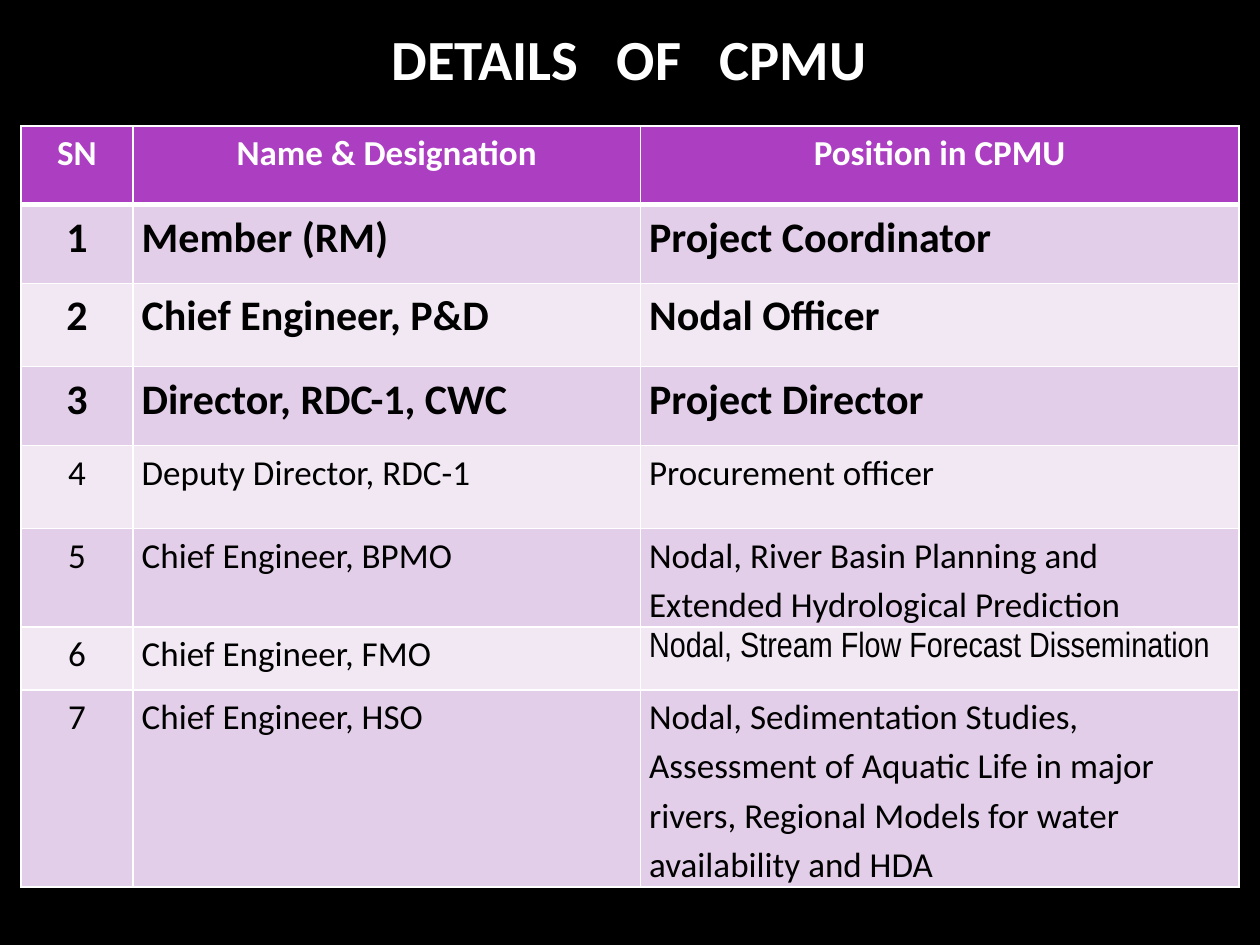
from lxml.etree import SubElement
from pptx import Presentation
from pptx.dml.color import RGBColor
from pptx.enum.text import MSO_ANCHOR, PP_ALIGN
from pptx.oxml.ns import qn
from pptx.util import Pt

COLORS = {
    "background": "000000",
    "title": "FFFFFF",
    "header_fill": "AC3EC1",
    "header_text": "FFFFFF",
    "odd_fill": "E3CEE9",
    "even_fill": "F1E8F4",
    "body_text": "000000",
    "border": "FFFFFF",
}

COLUMN_WIDTHS = [64, 290, 342]
ROW_HEIGHTS = [45, 45, 47.5, 45, 47.5, 47.5, 36, 47.5]
HEADINGS = ["SN", "Name & Designation", "Position in CPMU"]
MEMBERS = [
    ("Member (RM)", "Project Coordinator"),
    ("Chief Engineer, P&D", "Nodal Officer"),
    ("Director, RDC-1, CWC", "Project Director"),
    ("Deputy Director, RDC-1", "Procurement officer"),
    ("Chief Engineer, BPMO",
     "Nodal, River Basin Planning and Extended Hydrological Prediction"),
    ("Chief Engineer, FMO", "Nodal, Stream Flow Forecast Dissemination"),
    ("Chief Engineer, HSO",
     "Nodal, Sedimentation Studies, Assessment of Aquatic Life in major "
     "rivers, Regional Models for water availability and HDA"),
]
LEADERS = 3  # the first members are set larger and bold
NARROW_CELL = (6, 2)  # long position kept on one line

HEADER_FONT = {"name": "Calibri", "size": Pt(20), "bold": True}
LEADER_FONT = {"name": "Calibri", "size": Pt(24), "bold": True}
MEMBER_FONT = {"name": "Calibri", "size": Pt(20), "bold": False}
TITLE_FONT = {"name": "Calibri", "size": Pt(32.4), "bold": True}
CELL_FORMAT = {
    "margin_left": Pt(5), "margin_right": Pt(5),
    "margin_top": 0, "margin_bottom": 0,
    "vertical_anchor": MSO_ANCHOR.TOP,
}


def set_all(target, values):
    for name, value in values.items():
        setattr(target, name, value)


def color(name):
    return RGBColor.from_string(COLORS[name])


def add_borders(cell, widths):
    properties = cell._tc.get_or_add_tcPr()
    for side, width in widths.items():
        line = SubElement(properties, qn(f"a:ln{side}"), w=str(Pt(width)))
        fill = SubElement(line, qn("a:solidFill"))
        SubElement(fill, qn("a:srgbClr"), val=COLORS["border"])


def place_title(slide, left, top, width, height):
    title = slide.shapes.title
    set_all(title, {"left": Pt(left), "top": Pt(top),
                    "width": Pt(width), "height": Pt(height)})
    frame = title.text_frame
    set_all(frame, {"text": "DETAILS   OF   CPMU", "word_wrap": True,
                    "vertical_anchor": MSO_ANCHOR.MIDDLE})
    heading = frame.paragraphs[0]
    heading.alignment = PP_ALIGN.CENTER
    set_all(heading.runs[0].font, TITLE_FONT)
    heading.runs[0].font.color.rgb = color("title")


def format_cell(cell, row, column):
    # Borders go before the fill; a thick line lies under the header
    add_borders(cell, {"L": 1, "R": 1, "T": 3 if row == 1 else 1,
                       "B": 3 if row == 0 else 1})
    if row == 0:
        fill, text, font = "header_fill", "header_text", HEADER_FONT
    else:
        fill = "odd_fill" if row % 2 else "even_fill"
        text = "body_text"
        font = LEADER_FONT if row <= LEADERS else MEMBER_FONT
    if (row, column) == NARROW_CELL:
        font = {**font, "name": "Arial Narrow"}
    cell.fill.solid()
    cell.fill.fore_color.rgb = color(fill)
    set_all(cell, CELL_FORMAT)
    entry = cell.text_frame.paragraphs[0]
    centred = row == 0 or column == 0
    set_all(entry, {"line_spacing": 1.15,
                    "alignment": PP_ALIGN.CENTER if centred else PP_ALIGN.LEFT})
    set_all(entry.runs[0].font, font)
    entry.runs[0].font.color.rgb = color(text)


def place_members(slide, left, top, width, height):
    entries = [HEADINGS] + [(str(number), *member)
                            for number, member in enumerate(MEMBERS, 1)]
    table = slide.shapes.add_table(
        len(entries), len(HEADINGS),
        Pt(left), Pt(top), Pt(width), Pt(height)).table
    for column, column_width in zip(table.columns, COLUMN_WIDTHS):
        column.width = Pt(column_width)
    for row, row_height in zip(table.rows, ROW_HEIGHTS):
        row.height = Pt(row_height)
    for row, entry in enumerate(entries):
        for column, wording in enumerate(entry):
            cell = table.cell(row, column)
            cell.text = wording
            format_cell(cell, row, column)


def main():
    deck = Presentation()
    set_all(deck, {"slide_width": Pt(720), "slide_height": Pt(540)})
    slide = deck.slides.add_slide(deck.slide_layouts[5])
    slide.background.fill.solid()
    slide.background.fill.fore_color.rgb = color("background")
    place_title(slide, 16.5, 12, 686, 42)
    place_members(slide, 12, 72, sum(COLUMN_WIDTHS), sum(ROW_HEIGHTS))
    deck.save("out.pptx")


if __name__ == "__main__":
    main()
